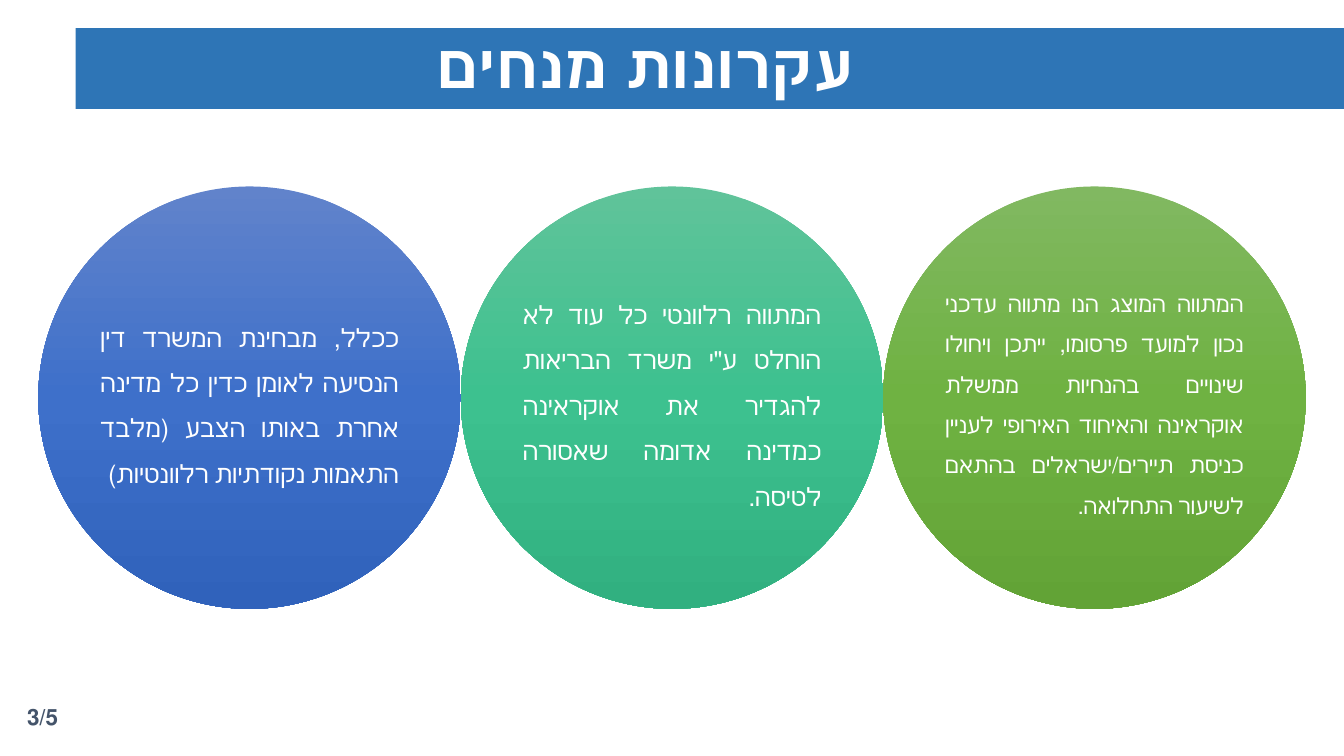
from copy import deepcopy

from lxml.etree import SubElement
from pptx import Presentation
from pptx.dml.color import RGBColor
from pptx.enum.lang import MSO_LANGUAGE_ID as Language
from pptx.enum.shapes import MSO_SHAPE as Shape
from pptx.enum.text import MSO_ANCHOR as Anchor, MSO_AUTO_SIZE as AutoSize, PP_ALIGN as Align
from pptx.oxml.ns import qn
from pptx.util import Inches, Pt

TITLE_ONLY = 5
DIAMETER = 4.19
PRINCIPLES = [
    ("ככלל, מבחינת המשרד דין הנסיעה לאומן כדין כל מדינה אחרת באותו הצבע "
     "(מלבד התאמות נקודתיות רלוונטיות)",
     18, ("6183CB", "3E70CA", "3062BB")),
    ("המתווה רלוונטי כל עוד לא הוחלט ע\"י משרד הבריאות להגדיר את אוקראינה "
     "כמדינה אדומה שאסורה לטיסה.",
     18, ("60C39A", "3DC18F", "31B080")),
    ("המתווה המוצג הנו מתווה עדכני נכון למועד פרסומו, ייתכן ויחולו שינויים "
     "בהנחיות ממשלת אוקראינה והאיחוד האירופי לעניין כניסת תיירים/ישראלים "
     "בהתאם לשיעור התחלואה.",
     16, ("81B861", "6FB242", "62A336")),
]


def color(value):
    return RGBColor.from_string(value)


def write(shape, text, size=18, ink="FFFFFF", bold=False, align=Align.LEFT,
          line_spacing=1.0, space_after=None, inset=None):
    """Put one right-to-left paragraph in the shape; space_after is a percentage."""
    frame = shape.text_frame
    frame.word_wrap = True
    frame.auto_size = AutoSize.NONE
    frame.vertical_anchor = Anchor.MIDDLE
    if inset is not None:
        frame.margin_left = frame.margin_right = Inches(inset)
        frame.margin_top = frame.margin_bottom = Inches(inset)

    para = frame.paragraphs[0]
    para.alignment = align
    para.line_spacing = line_spacing
    properties = para._p.get_or_add_pPr()
    properties.set("rtl", "1")
    if space_after is not None:
        gap = SubElement(properties, qn("a:spcAft"))
        SubElement(gap, qn("a:spcPct")).set("val", str(space_after * 1000))

    span = para.add_run()
    span.text = text
    font = span.font
    font.size = Pt(size)
    font.bold = bold
    font.color.rgb = color(ink)
    font.name = SlideBuilder.font
    font.language_id = Language.HEBREW


class SlideBuilder:
    font = "Roboto"
    band = "2E75B6"
    page_ink = "44546A"

    def __init__(self, deck):
        self.page = deck.slides.add_slide(deck.slide_layouts[TITLE_ONLY])
        self.shapes = self.page.shapes

    def plain_shape(self, kind, *place):
        shape = self.shapes.add_shape(kind, *map(Inches, place))
        shape.shadow.inherit = False
        shape.line.fill.background()
        return shape

    def title(self, text):
        bar = self.plain_shape(Shape.RECTANGLE, 0.75, 0.28, 12.59, 0.8)
        bar.fill.solid()
        bar.fill.fore_color.rgb = color(self.band)

        title = self.shapes.title
        title.left, title.top = Inches(0.65), Inches(-0.04)
        title.width, title.height = Inches(11.5), Inches(1.45)
        bar._element.addnext(title._element)
        write(title, text, size=44, bold=True, align=Align.CENTER, line_spacing=0.9)

    def page_number(self, text):
        box = self.shapes.add_textbox(*map(Inches, (0.17, 6.91, 3, 0.4)))
        write(box, text, size=16, ink=self.page_ink, bold=True)

    def circle(self, left, top, text, size, shades):
        circle = self.plain_shape(Shape.OVAL, left, top, DIAMETER, DIAMETER)
        self.shade(circle, shades)
        write(circle, text, size=size, align=Align.JUSTIFY,
              line_spacing=1.5, space_after=35, inset=0)

    def shade(self, shape, shades):
        """Fill from top to bottom with three evenly spaced shades."""
        fill = shape.fill
        fill.gradient()
        fill.gradient_angle = 270
        first = next(shape._element.spPr.iter(qn("a:gs")))
        first.addnext(deepcopy(first))
        for index, (stop, value) in enumerate(zip(fill.gradient_stops, shades)):
            stop.position = index / 2
            stop.color.rgb = color(value)


def main():
    deck = Presentation()
    deck.slide_width, deck.slide_height = Inches(13.33), Inches(7.5)
    builder = SlideBuilder(deck)
    builder.title("עקרונות מנחים")
    builder.page_number("3/5")
    for index, (text, size, shades) in enumerate(PRINCIPLES):
        builder.circle(0.38 + index * DIAMETER, 1.85, text, size, shades)
    deck.save("out.pptx")


if __name__ == "__main__":
    main()
